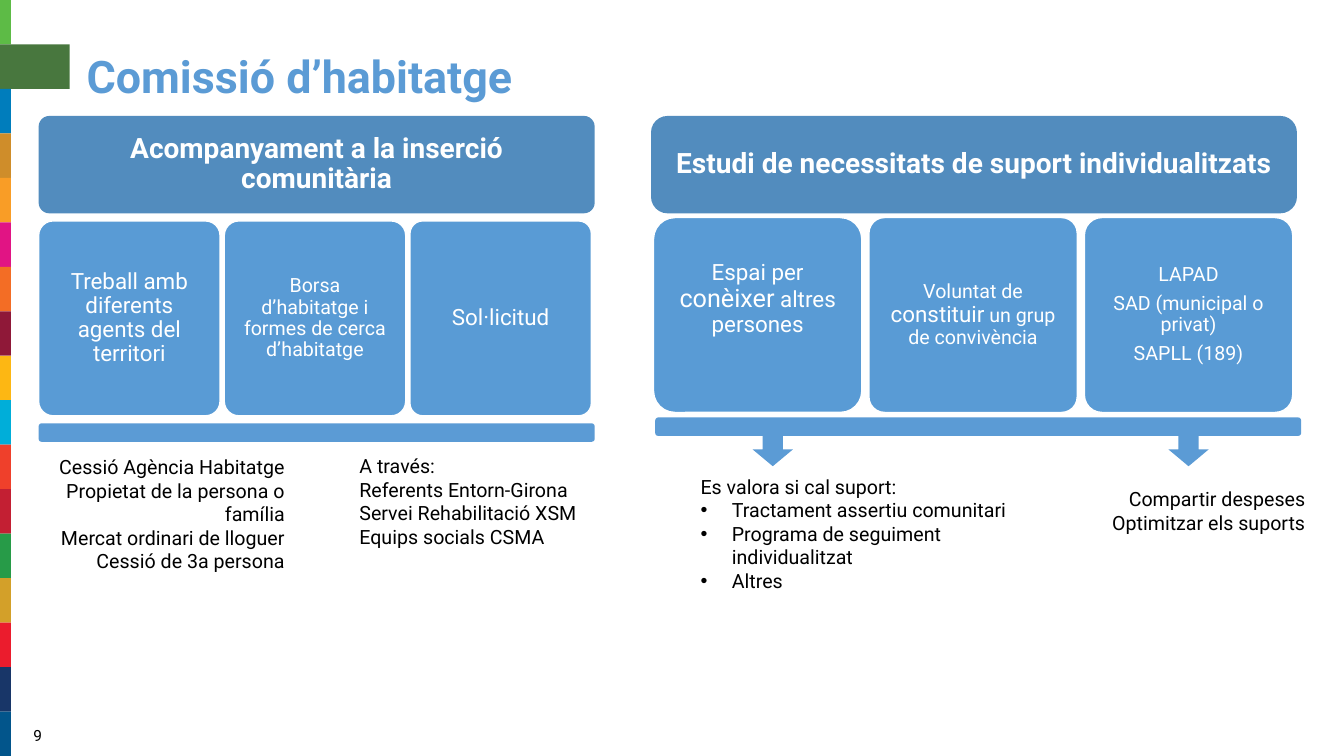
from lxml.etree import SubElement
from pptx import Presentation
from pptx.dml.color import RGBColor
from pptx.enum.shapes import MSO_SHAPE as Shape
from pptx.enum.text import MSO_ANCHOR as Anchor, MSO_AUTO_SIZE as AutoSize, PP_ALIGN as Align
from pptx.oxml.ns import qn
from pptx.util import Inches, Pt

WHITE = RGBColor(0xFF, 0xFF, 0xFF)
BLACK = RGBColor(0x00, 0x00, 0x00)
BLUE = RGBColor(0x5B, 0x9B, 0xD5)
CARD_BLUE = RGBColor(0x59, 0x9B, 0xD5)
HEADER_BLUE = RGBColor(0x52, 0x8C, 0xBE)
STRIP = [RGBColor.from_string(code) for code in (
    "5DBB46 48773E 007DBC CF8D2A F99D26 E11484 F36D25 8F1838 FDB713 "
    "00AED9 EF402B C31F33 279B48 D3A029 EB1C2D 183668 02558B").split()]

COLUMNS, ROWS = 160, 90
CARD_ROWS = 23.2
HEADER_TOP, HEADER_ROWS = 13.8, 11.6
BAR_ROWS = 2.2


class SlideBuilder:
    """Place styled elements on a slide by columns and rows."""

    font_name = "Roboto"
    bullet_indent = Inches(0.31)
    frame_format = {"word_wrap": True, "auto_size": AutoSize.NONE}
    card_insets = {f"margin_{side}": Inches(0.12) for side in ("left", "top", "right", "bottom")}

    def __init__(self, presentation):
        self.slide = presentation.slides.add_slide(presentation.slide_layouts[1])
        self.column = presentation.slide_width / COLUMNS
        self.row = presentation.slide_height / ROWS

    def apply(self, target, values):
        for name, value in values.items():
            setattr(target, name, value)

    def box(self, left, top, width, height):
        return (round(left * self.column), round(top * self.row),
                round(width * self.column), round(height * self.row))

    def fill_text(self, shape, paragraphs, size, color=BLACK, bold=False, bullets=False,
                  frame=None, **paragraph_format):
        text_frame = shape.text_frame
        self.apply(text_frame, {**self.frame_format, **(frame or {})})
        for index, content in enumerate(paragraphs):
            paragraph = text_frame.add_paragraph() if index else text_frame.paragraphs[0]
            if bullets:
                self.bullet(paragraph, shown=index > 0)
            self.apply(paragraph, paragraph_format)
            if not index:
                paragraph.space_before = Pt(0)
            runs = [(content, size)] if isinstance(content, str) else content
            for text, run_size in runs:
                run = paragraph.add_run()
                run.text = text
                self.apply(run.font, {"name": self.font_name, "size": Pt(run_size), "bold": bold})
                run.font.color.rgb = color

    def bullet(self, paragraph, shown):
        properties = paragraph._p.get_or_add_pPr()
        indent = self.bullet_indent if shown else 0
        properties.set("marL", str(indent))
        properties.set("indent", str(-indent))
        if shown:
            SubElement(properties, qn("a:buChar")).set("char", "•")
        else:
            SubElement(properties, qn("a:buNone"))

    def title(self, box, text):
        shape = self.slide.shapes.title
        self.apply(shape, dict(zip(("left", "top", "width", "height"), self.box(*box))))
        self.fill_text(shape, [text], 32, BLUE, True, frame={"vertical_anchor": Anchor.MIDDLE},
                       alignment=Align.LEFT, line_spacing=0.9)

    def bullet_list(self, box, paragraphs):
        shape = self.slide.placeholders[1]
        self.apply(shape, dict(zip(("left", "top", "width", "height"), self.box(*box))))
        self.fill_text(shape, paragraphs, 14, bullets=True, space_before=Pt(0))

    def text(self, box, paragraphs, size=14, anchor=Anchor.TOP, alignment=Align.LEFT):
        shape = self.slide.shapes.add_textbox(*self.box(*box))
        self.fill_text(shape, paragraphs, size, frame={"vertical_anchor": anchor},
                       alignment=alignment)

    def block(self, box, color, kind=Shape.RECTANGLE, corner=None, outlined=False):
        shape = self.slide.shapes.add_shape(kind, *self.box(*box))
        shape.shadow.inherit = False
        shape.fill.solid()
        shape.fill.fore_color.rgb = color
        if outlined:
            shape.line.color.rgb = WHITE
            shape.line.width = Pt(1)
        else:
            shape.line.fill.background()
        if corner is not None:
            shape.adjustments[0] = corner
        return shape

    def panel(self, box, color, corner, paragraphs, size, bold=False, outlined=False,
              space_before=0, bottom=0.12):
        shape = self.block(box, color, Shape.ROUNDED_RECTANGLE, corner, outlined)
        frame = {**self.card_insets, "margin_bottom": Inches(bottom),
                 "vertical_anchor": Anchor.MIDDLE}
        self.fill_text(shape, paragraphs, size, WHITE, bold, frame=frame, alignment=Align.CENTER,
                       line_spacing=0.9, space_before=Pt(space_before))

    def header(self, left, width, corner, text):
        self.panel((left, HEADER_TOP, width, HEADER_ROWS), HEADER_BLUE, corner, [text], 20, True)

    def cards(self, left, top, step, width, cards):
        for index, card in enumerate(cards):
            self.panel((left + index * step, top, width, CARD_ROWS), CARD_BLUE,
                       outlined=True, **card)

    def bar(self, left, top, width):
        self.block((left, top, width, BAR_ROWS), BLUE, Shape.ROUNDED_RECTANGLE)

    def strip(self):
        height = ROWS / len(STRIP)
        for index, color in enumerate(STRIP):
            width = 8.3 if index == 1 else 1.3
            self.block((0, index * height, width, height), color)


def main():
    presentation = Presentation()
    presentation.slide_width, presentation.slide_height = Inches(13.33), Inches(7.5)
    builder = SlideBuilder(presentation)

    builder.strip()
    builder.title((9.1, 2.3, 145.8, 14.2), "Comissió d’habitatge")
    builder.text((2.8, 85.2, 36, 4.8), ["9"], 11, Anchor.MIDDLE)

    builder.cards(4.6, 26.3, 22.1, 21.6, [
        {"corner": 0.08, "size": 16, "paragraphs": ["Treball amb diferents agents del territori"]},
        {"corner": 0.08, "size": 14,
         "paragraphs": ["Borsa d’habitatge i formes de cerca d’habitatge"]},
        {"corner": 0.07, "size": 16, "paragraphs": ["Sol·licitud"]},
    ])
    builder.header(4.6, 66.2, 0.11, "Acompanyament a la inserció comunitària")
    builder.bar(4.6, 50.4, 66.2)
    builder.text((0.8, 53.6, 34.3, 21.8), [
        "Cessió Agència Habitatge", "Propietat de la persona o família",
        "Mercat ordinari de lloguer", "Cessió de 3a persona"], alignment=Align.RIGHT)
    builder.text((41.6, 53.5, 39.7, 19), [
        "A través:", "Referents Entorn-Girona", "Servei Rehabilitació XSM",
        "Equips socials CSMA"])

    builder.cards(77.8, 25.9, 25.65, 24.8, [
        {"corner": 0.11, "size": 16, "bottom": 0.43,
         "paragraphs": [[("Espai per ", 16), ("conèixer", 18), (" altres persones", 16)]]},
        {"corner": 0.08, "size": 14,
         "paragraphs": [[("Voluntat de ", 14), ("constituir", 16),
                         (" un grup de convivència", 14)]]},
        {"corner": 0.09, "size": 14, "space_before": 5.6,
         "paragraphs": ["LAPAD", "SAD (municipal o privat)", "SAPLL (189)"]},
    ])
    builder.header(77.5, 76.9, 0.17, "Estudi de necessitats de suport individualitzats")
    builder.bar(78, 49.7, 76.9)
    for arrow_left in (89.6, 139.1):
        builder.block((arrow_left, 51.5, 4.8, 4), BLUE, Shape.DOWN_ARROW)
    builder.bullet_list((82.2, 55.9, 42.8, 21.8), [
        "Es valora si cal suport:", "Tractament assertiu comunitari",
        "Programa de seguiment individualitzat", "Altres"])
    builder.text((115.8, 57.4, 40.8, 6.8), ["Compartir despeses", "Optimitzar els suports"],
                 alignment=Align.RIGHT)

    presentation.save("out.pptx")


if __name__ == "__main__":
    main()
